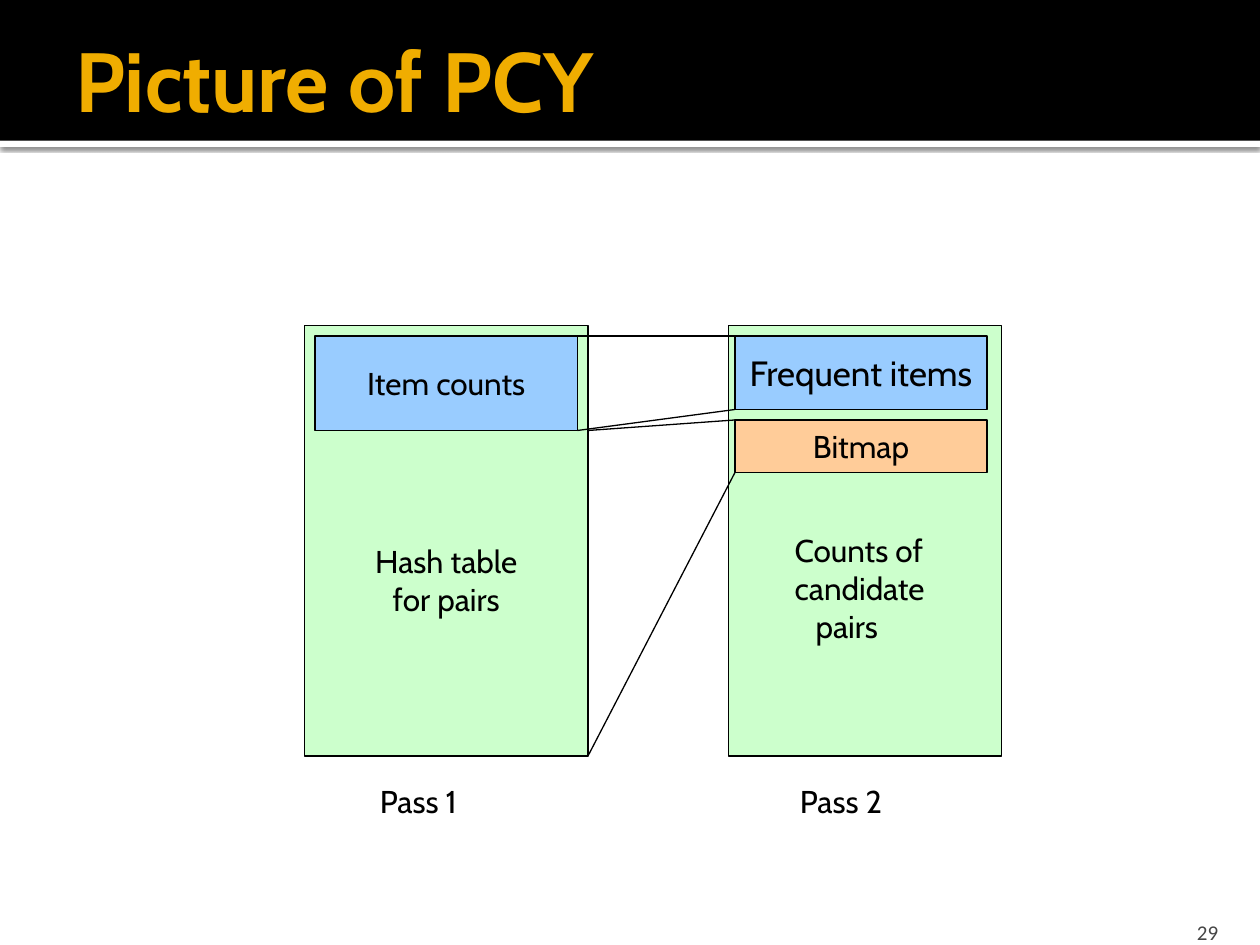
from lxml import etree
from pptx import Presentation
from pptx.dml.color import RGBColor
from pptx.enum.shapes import MSO_CONNECTOR, MSO_SHAPE
from pptx.enum.text import MSO_ANCHOR, PP_ALIGN
from pptx.oxml.ns import qn
from pptx.util import Pt

EMU_PER_PX = 7620  # 120 px to the inch
WIDTH, HEIGHT = 1200, 900

RECTANGLE = MSO_SHAPE.RECTANGLE
STRAIGHT = MSO_CONNECTOR.STRAIGHT
LEFT, CENTER, RIGHT = PP_ALIGN.LEFT, PP_ALIGN.CENTER, PP_ALIGN.RIGHT
TOP, MIDDLE, BOTTOM = MSO_ANCHOR.TOP, MSO_ANCHOR.MIDDLE, MSO_ANCHOR.BOTTOM

BLACK = RGBColor(0x00, 0x00, 0x00)
WHITE = RGBColor(0xFF, 0xFF, 0xFF)
GOLD = RGBColor(0xF0, 0xAD, 0x00)
GRAY = RGBColor(0x45, 0x45, 0x45)
GREEN = RGBColor(0xCC, 0xFF, 0xCC)
BLUE = RGBColor(0x99, 0xCC, 0xFF)
ORANGE = RGBColor(0xFF, 0xCC, 0x99)


def px(length):
    return length * EMU_PER_PX


def write(frame, text, size=18, color=BLACK, font="Cabin", bold=False,
          align=LEFT, anchor=TOP, insets=(12, 6, 12, 6)):
    """Fill a text frame, one paragraph for each line of text."""
    frame.word_wrap = True
    frame.vertical_anchor = anchor
    (frame.margin_left, frame.margin_top,
     frame.margin_right, frame.margin_bottom) = map(px, insets)
    frame.text = text
    for paragraph in frame.paragraphs:
        paragraph.alignment = align
        style = paragraph.runs[0].font
        style.size = Pt(size)
        style.name = font
        style.bold = bold
        style.color.rgb = color


class Canvas:
    """The current slide and the line style of its diagram."""

    def __init__(self, slide, line_color=BLACK, line_width=0.75):
        self.shapes = slide.shapes
        self.line_color = line_color
        self.line_width = Pt(line_width)

    def band(self, box, fill):
        """Add a plain rectangle without an outline."""
        band = self.shapes.add_shape(RECTANGLE, *map(px, box))
        band.shadow.inherit = False
        band.fill.solid()
        band.fill.fore_color.rgb = fill
        band.line.fill.background()
        return band

    def block(self, box, fill, text="", **text_format):
        """Add an outlined rectangle, with centred text if any."""
        block = self.band(box, fill)
        block.line.color.rgb = self.line_color
        block.line.width = self.line_width
        if text:
            write(block.text_frame, text, align=CENTER, anchor=MIDDLE,
                  **text_format)

    def label(self, box, text, **text_format):
        label = self.shapes.add_textbox(*map(px, box))
        write(label.text_frame, text, **text_format)
        return label

    def line(self, start, end):
        line = self.shapes.add_connector(STRAIGHT, *map(px, start + end))
        line.line.color.rgb = self.line_color
        line.line.width = self.line_width
        etree.SubElement(line._element.spPr, qn("a:effectLst"))


def add_soft_shadow(shape):
    effects = shape._element.spPr.find(qn("a:effectLst"))
    shadow = etree.SubElement(
        effects, qn("a:outerShdw"), blurRad=str(Pt(2.5)), dist=str(Pt(0.8)),
        dir="5400000", algn="tl", rotWithShape="0")
    color = etree.SubElement(shadow, qn("a:srgbClr"), val=str(BLACK))
    etree.SubElement(color, qn("a:alpha"), val="60000")


def draw_frame(canvas):
    """Add the header, the title and the slide number."""
    header_height = 134
    add_soft_shadow(canvas.band((0, header_height, WIDTH, 6), WHITE))
    canvas.band((0, 0, WIDTH, header_height), BLACK)
    canvas.label((60, 20, 1140, 110), "Picture of PCY", size=48, color=GOLD,
                 bold=True, anchor=MIDDLE, insets=(12, 6, 6, 6))
    canvas.label((1076, 864, 96, 36), "29", size=12, color=GRAY,
                 font="Calibri", align=RIGHT, anchor=BOTTOM,
                 insets=(12, 6, 12, 0))


def draw_memory(canvas):
    """Add main memory in both passes and what becomes of each part."""
    memory_top, memory_height = 310, 410
    memory_bottom = memory_top + memory_height
    pass1_left, pass1_width = 290, 270
    pass1_right = pass1_left + pass1_width
    items_top = memory_top + 10
    counts_left, counts_width, counts_height = 300, 250, 90
    counts_right = counts_left + counts_width
    counts_bottom = items_top + counts_height
    inner_left, inner_width = 700, 240
    frequent_height, bitmap_height = 70, 50
    frequent_bottom = items_top + frequent_height
    bitmap_top = frequent_bottom + 10
    bitmap_bottom = bitmap_top + bitmap_height

    canvas.block((pass1_left, memory_top, pass1_width, memory_height), GREEN,
                 "Hash table\nfor pairs", insets=(12, 80, 12, 6))
    canvas.block((694, memory_top, 260, memory_height), GREEN)
    canvas.block((counts_left, items_top, counts_width, counts_height), BLUE,
                 "Item counts")
    canvas.block((inner_left, bitmap_top, inner_width, bitmap_height), ORANGE,
                 "Bitmap")
    canvas.block((inner_left, items_top, inner_width, frequent_height), BLUE,
                 "Frequent items", size=20, insets=(6, 6, 6, 6))

    for number, left in enumerate((350, 750), start=1):
        canvas.label((left, 739, 138, 60), f"Pass {number}")
    candidates = canvas.label((745, 500, 194, 156),
                              "Counts of\ncandidate\npairs")
    last_line = candidates.text_frame.paragraphs[-1]
    last_line._p.get_or_add_pPr().set("marL", str(px(20)))

    for start, end_y in (
        ((counts_right, items_top), items_top),
        ((counts_right, counts_bottom), frequent_bottom),
        ((pass1_right, counts_bottom), bitmap_top),
        ((pass1_right, memory_bottom), bitmap_bottom),
    ):
        canvas.line(start, (inner_left, end_y))


def main():
    deck = Presentation()
    deck.slide_width, deck.slide_height = px(WIDTH), px(HEIGHT)
    canvas = Canvas(deck.slides.add_slide(deck.slide_layouts[6]))
    draw_frame(canvas)
    draw_memory(canvas)
    deck.save("out.pptx")


if __name__ == "__main__":
    main()
